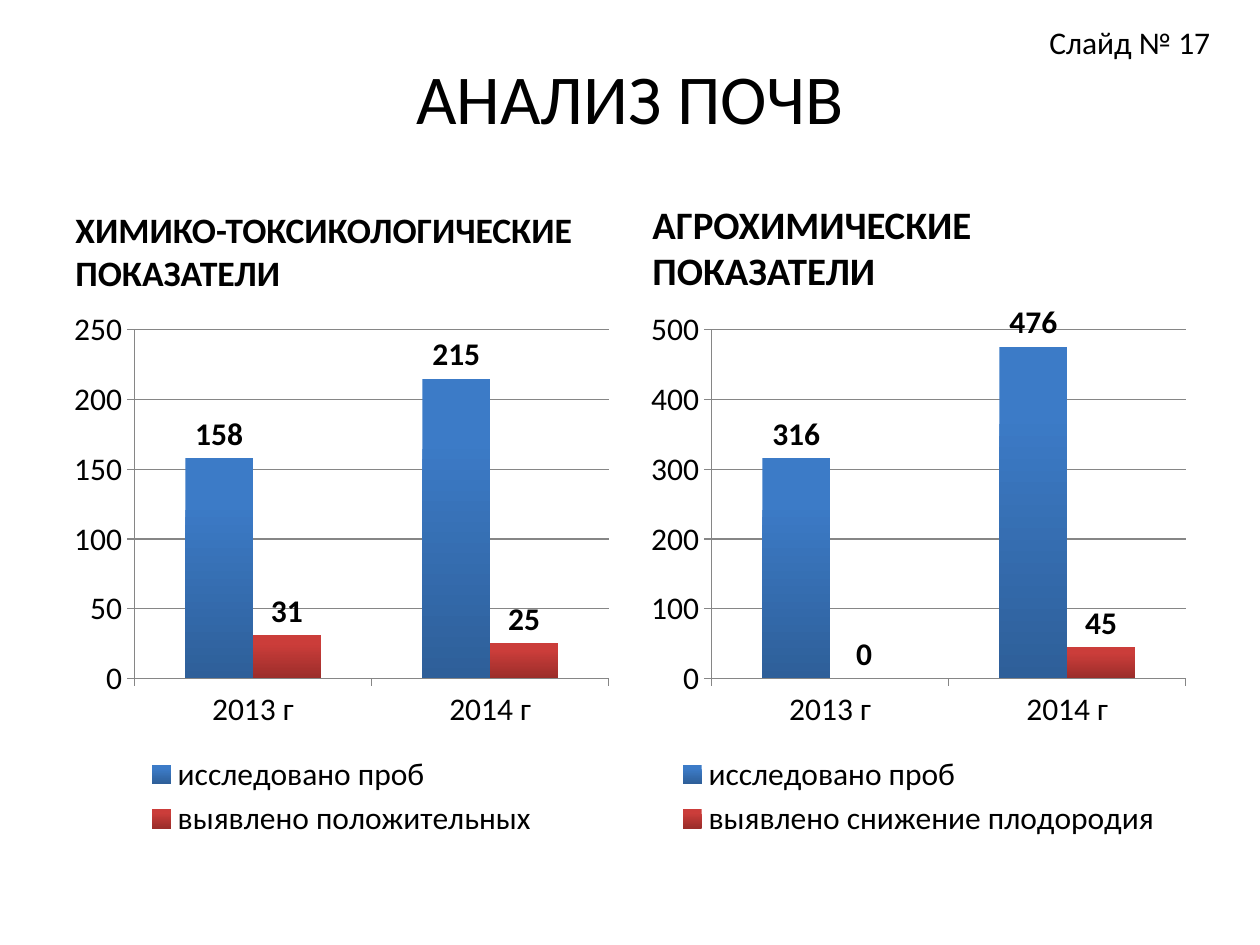
from pptx import Presentation
from pptx.chart.data import CategoryChartData
from pptx.dml.color import RGBColor
from pptx.enum.chart import XL_CHART_TYPE, XL_LABEL_POSITION, XL_LEGEND_POSITION, XL_TICK_MARK
from pptx.enum.text import MSO_ANCHOR, MSO_AUTO_SIZE, PP_ALIGN
from pptx.util import Inches, Pt

COLUMNS = XL_CHART_TYPE.COLUMN_CLUSTERED
OUTSIDE_END = XL_LABEL_POSITION.OUTSIDE_END
LEGEND_BOTTOM = XL_LEGEND_POSITION.BOTTOM
TICK_OUT = XL_TICK_MARK.OUTSIDE
MIDDLE, BOTTOM = MSO_ANCHOR.MIDDLE, MSO_ANCHOR.BOTTOM
NO_AUTOFIT = MSO_AUTO_SIZE.NONE
CENTER, LEFT = PP_ALIGN.CENTER, PP_ALIGN.LEFT

FONT = "Calibri"
BLACK = RGBColor(0x00, 0x00, 0x00)
AXIS_GRAY = RGBColor(0x86, 0x86, 0x86)
# Top and bottom colour of each series' columns
BLUE = (RGBColor(0x3C, 0x7B, 0xC7), RGBColor(0x2E, 0x5F, 0x99))
RED = (RGBColor(0xCB, 0x3D, 0x3A), RGBColor(0x9B, 0x2D, 0x2A))

YEARS = ["2013 г", "2014 г"]
PANEL_TOP, PANEL_WIDTH = 1.68, 4.42
HEADING_HEIGHT, CHART_HEIGHT = 0.7, 4.32
PANELS = [
    {
        "left": 0.5,
        "heading": "ХИМИКО-ТОКСИКОЛОГИЧЕСКИЕ ПОКАЗАТЕЛИ",
        "heading_size": 20.4,
        "series": [("исследовано проб", (158, 215)),
                   ("выявлено положительных", (31, 25))],
        "axis_max": 250,
        "axis_step": 50,
    },
    {
        "left": 5.08,
        "heading": "АГРОХИМИЧЕСКИЕ ПОКАЗАТЕЛИ",
        "heading_size": 22.2,
        "series": [("исследовано проб", (316, 476)),
                   ("выявлено снижение плодородия", (0, 45))],
        "axis_max": 500,
        "axis_step": 100,
    },
]


def set_font(font, size, bold=False):
    font.name = FONT
    font.size = Pt(size)
    font.bold = bold
    font.color.rgb = BLACK


def write_text(shape, text, size, anchor, align=LEFT, bold=False):
    frame = shape.text_frame
    frame.word_wrap = True
    frame.auto_size = NO_AUTOFIT
    frame.vertical_anchor = anchor
    paragraph = frame.paragraphs[0]
    paragraph.text = text
    paragraph.alignment = align
    set_font(paragraph.font, size, bold)


def add_title(slide, left, top, width, height):
    title = slide.shapes.title
    title.left, title.top, title.width, title.height = (
        Inches(left), Inches(top), Inches(width), Inches(height))
    write_text(title, "АНАЛИЗ ПОЧВ", 40, MIDDLE, CENTER)


def add_text(slide, box, *args, **kwargs):
    textbox = slide.shapes.add_textbox(*map(Inches, box))
    write_text(textbox, *args, **kwargs)


def format_series(series, colors):
    fill = series.format.fill
    fill.gradient()
    fill.gradient_angle = 270
    for stop, color, position in zip(fill.gradient_stops, colors, (0.2, 1)):
        stop.color.rgb = color
        stop.position = position
    series.invert_if_negative = False
    labels = series.data_labels
    labels.show_value = True
    labels.position = OUTSIDE_END
    set_font(labels.font, 18, bold=True)


def add_column_chart(slide, box, series_values, axis_max, axis_step):
    data = CategoryChartData()
    data.categories = YEARS
    for name, values in series_values:
        data.add_series(name, values)
    chart = slide.shapes.add_chart(COLUMNS, *map(Inches, box), data).chart
    chart.has_title = False
    set_font(chart.font, 18)

    chart.has_legend = True
    chart.legend.position = LEGEND_BOTTOM
    chart.legend.include_in_layout = False

    for axis in (chart.category_axis, chart.value_axis):
        axis.major_tick_mark = TICK_OUT
        axis.format.line.color.rgb = AXIS_GRAY
        axis.format.line.width = Pt(0.75)
    value_axis = chart.value_axis
    value_axis.minimum_scale = 0
    value_axis.maximum_scale = axis_max
    value_axis.major_unit = axis_step
    value_axis.has_major_gridlines = True
    value_axis.major_gridlines.format.line.color.rgb = AXIS_GRAY
    value_axis.major_gridlines.format.line.width = Pt(0.75)

    plot = chart.plots[0]
    plot.gap_width = 150
    plot.overlap = 0
    plot.vary_by_categories = False
    for series, colors in zip(plot.series, (BLUE, RED)):
        format_series(series, colors)


def add_panel(slide, panel):
    """Place a heading with its column chart directly below."""
    left = panel["left"]
    add_text(slide, (left, PANEL_TOP, PANEL_WIDTH, HEADING_HEIGHT),
             panel["heading"], panel["heading_size"], BOTTOM, bold=True)
    add_column_chart(
        slide, (left, PANEL_TOP + HEADING_HEIGHT, PANEL_WIDTH, CHART_HEIGHT),
        panel["series"], panel["axis_max"], panel["axis_step"])


def main():
    presentation = Presentation()
    presentation.slide_width = Inches(10)
    presentation.slide_height = Inches(7.5)
    slide = presentation.slides.add_slide(presentation.slide_layouts[5])
    add_title(slide, 0.5, 0.3, 9, 0.93)
    for panel in PANELS:
        add_panel(slide, panel)
    add_text(slide, (8.23, 0.13, 1.57, 0.4), "Слайд № 17", 18, MIDDLE)
    presentation.save("out.pptx")


if __name__ == "__main__":
    main()
